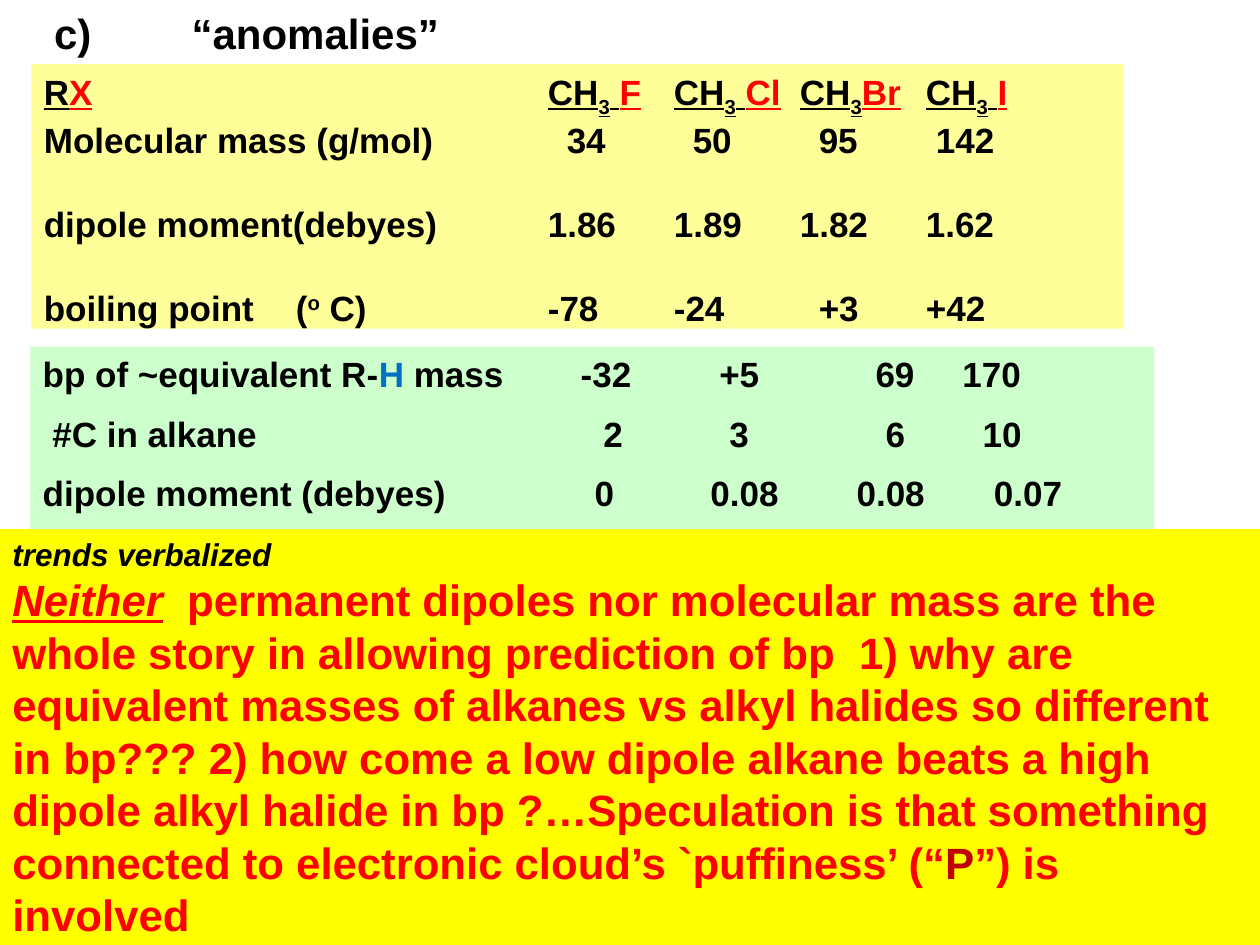
from lxml.etree import SubElement
from pptx import Presentation
from pptx.dml.color import RGBColor
from pptx.enum.shapes import MSO_SHAPE as Shape
from pptx.enum.text import MSO_ANCHOR as Anchor, MSO_AUTO_SIZE as AutoSize, PP_ALIGN as Align
from pptx.oxml.ns import qn
from pptx.util import Inches, Pt

BLACK, RED, DARK_RED, BLUE = "000000", "FF0000", "C00000", "0070C0"
PALE_YELLOW, PALE_GREEN, YELLOW = "FFFF99", "CCFFCC", "FFFF00"


def color(value):
    return RGBColor.from_string(value)


class SlideWriter:
    font = "Arial"

    def __init__(self, deck):
        self.page = deck.slides.add_slide(deck.slide_layouts[5])

    def title(self, place, spans, size, tabs):
        box = self.page.shapes.title
        box.left, box.top, box.width, box.height = map(Inches, place)
        self.prepare_frame(box)
        self.paragraph(box.text_frame.paragraphs[0], spans, size, tabs)

    def panel(self, place, fill, rows):
        """Draw a filled rectangle; each row is a dict of paragraph() arguments."""
        box = self.page.shapes.add_shape(Shape.RECTANGLE, *map(Inches, place))
        box.shadow.inherit = False
        box.fill.solid()
        box.fill.fore_color.rgb = color(fill)
        box.line.fill.background()
        frame = self.prepare_frame(box)
        for index, row in enumerate(rows):
            para = frame.add_paragraph() if index else frame.paragraphs[0]
            self.paragraph(para, **row)

    def prepare_frame(self, box):
        frame = box.text_frame
        settings = {"word_wrap": True, "auto_size": AutoSize.NONE, "vertical_anchor": Anchor.TOP}
        for name, value in settings.items():
            setattr(frame, name, value)
        return frame

    def paragraph(self, para, spans, size=20, tabs=(), before=0):
        para.alignment = Align.LEFT
        para.space_before = Pt(before)
        if tabs:
            tab_list = SubElement(para._p.get_or_add_pPr(), qn("a:tabLst"))
            for stop in tabs:
                SubElement(tab_list, qn("a:tab"), pos=str(Inches(stop)), algn="l")
        for text, style in spans:
            self.span(para, text, size, **style)

    def span(self, para, text, size, tint=BLACK, baseline=0, **style):
        span = para.add_run()
        span.text = text
        formats = {"name": self.font, "size": Pt(size), "bold": True} | style
        for name, value in formats.items():
            setattr(span.font, name, value)
        span.font.color.rgb = color(tint)
        if baseline:
            span.font._element.set("baseline", str(baseline * 1000))


def plain(*cells):
    """One span with its cells parted by tabs."""
    return [("\t".join(cells), {})]


def halide_header(halogens):
    line = {"underline": True}
    spans = [("R", line), ("X", line | {"tint": RED})]
    for gap, halogen in halogens:
        spans += [("\t", {}), ("CH", line), ("3", line | {"baseline": -25})]
        if gap:
            spans.append((gap, line))
        spans.append((halogen, line | {"tint": RED}))
    return spans


def main():
    deck = Presentation()
    deck.slide_width, deck.slide_height = Inches(10), Inches(7.5)
    writer = SlideWriter(deck)
    writer.title((0.33, 0.01, 4.42, 0.5), plain("c)", "“anomalies”"), 24, [1.09])

    columns = [4, 5, 6, 7]
    boiling_point = [
        ("boiling point\t(", {}),
        ("o", {"baseline": 30}),
        (" C)\t-78\t-24\t+3\t+42", {}),
    ]
    writer.panel((0.25, 0.51, 8.67, 2.1), PALE_YELLOW, [
        {"spans": halide_header([(" ", "F"), (" ", "Cl"), ("", "Br"), (" ", "I")]),
         "tabs": columns},
        {"spans": plain("Molecular mass (g/mol)", "34", "50", "95", "142"),
         "tabs": [4.15, 5.15, 6.15, 7.08]},
        {"spans": plain("dipole moment(debyes)", "1.86", "1.89", "1.82", "1.62"),
         "tabs": columns, "before": 24},
        {"spans": boiling_point, "tabs": [2, 4, 5, 6.15, 7], "before": 24},
    ])

    red = {"tint": RED}
    question = (
        "permanent dipoles nor molecular mass are the whole story in allowing "
        "prediction of bp  1) why are equivalent masses of alkanes vs alkyl halides "
        "so different in bp??? 2) how come a low dipole alkane beats a high dipole "
        "alkyl halide in bp ?…Speculation is that something connected to electronic "
        "cloud’s `puffiness’ (“"
    )
    writer.panel((0, 4.2, 10, 3.4), YELLOW, [
        {"spans": [("trends verbalized", {"italic": True})], "size": 18},
        {"spans": [
            ("Neither", red | {"italic": True, "underline": True}),
            ("  " + question, red),
            ("P", {"tint": DARK_RED}),
            ("”) is involved", red),
        ], "size": 25},
    ])

    alkane_boiling = [
        ("bp of ~equivalent R-", {}),
        ("H ", {"tint": BLUE}),
        ("mass\t-32\t+5\t69\t170", {}),
    ]
    writer.panel((0.24, 2.75, 8.92, 1.45), PALE_GREEN, [
        {"spans": alkane_boiling, "tabs": [4.27, 5.37, 6.61, 7.3]},
        {"spans": plain(" #C in alkane", "2", "3", "6", "10"),
         "tabs": [4.45, 5.45, 6.69, 7.46], "before": 10},
        {"spans": plain("dipole moment (debyes)", "0", "0.08", "0.08", "0.07"),
         "tabs": [4.38, 5.3, 6.46, 7.55], "before": 10},
    ])
    deck.save("out.pptx")


if __name__ == "__main__":
    main()
